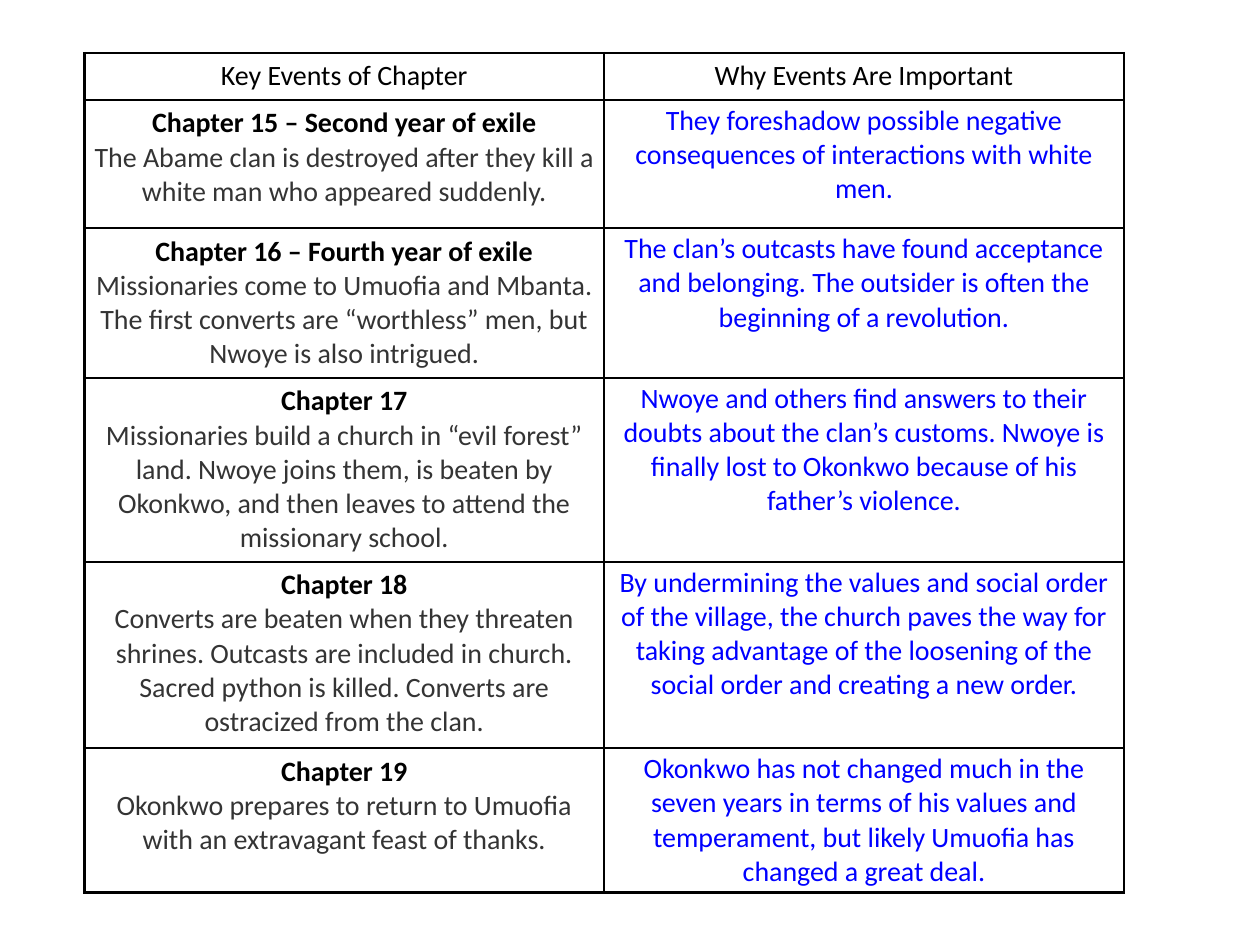
from lxml import etree
from pptx import Presentation
from pptx.dml.color import RGBColor
from pptx.enum import text
from pptx.oxml.ns import qn
from pptx.util import Inches, Pt

BLACK = RGBColor(0x00, 0x00, 0x00)
GRAY = RGBColor(0x34, 0x34, 0x34)
BLUE = RGBColor(0x00, 0x00, 0xFF)

COLUMN_WIDTH = 4.125
ROW_HEIGHTS = [0.25, 1.02, 1.17, 1.17, 1.48, 0.98]
HEADINGS = ["Key Events of Chapter", "Why Events Are Important"]
CHAPTERS = [
    ("Chapter 15 – Second year of exile",
     "The Abame clan is destroyed after they kill a white man who appeared suddenly.",
     "They foreshadow possible negative consequences of interactions with white men."),
    ("Chapter 16 – Fourth year of exile",
     "Missionaries come to Umuofia and Mbanta. The first converts are “worthless” men, "
     "but Nwoye is also intrigued.",
     "The clan’s outcasts have found acceptance and belonging. The outsider is often "
     "the beginning of a revolution."),
    ("Chapter 17",
     "Missionaries build a church in “evil forest” land. Nwoye joins them, is beaten by "
     "Okonkwo, and then leaves to attend the missionary school.",
     "Nwoye and others find answers to their doubts about the clan’s customs. Nwoye is "
     "finally lost to Okonkwo because of his father’s violence."),
    ("Chapter 18",
     "Converts are beaten when they threaten shrines. Outcasts are included in church. "
     "Sacred python is killed. Converts are ostracized from the clan.",
     "By undermining the values and social order of the village, the church paves the "
     "way for taking advantage of the loosening of the social order and creating a new order."),
    ("Chapter 19",
     "Okonkwo prepares to return to Umuofia with an extravagant feast of thanks.",
     "Okonkwo has not changed much in the seven years in terms of his values and "
     "temperament, but likely Umuofia has changed a great deal."),
]


def write(para, words, color=BLACK, bold=False):
    para.alignment = text.PP_ALIGN.CENTER
    span = para.add_run()
    span.text = words
    span.font.name = "Calibri"
    span.font.size = Pt(16)
    span.font.bold = bold
    span.font.color.rgb = color


def style_cell(cell, side=0.05, top=0.05):
    """Set the insets, a black border on every side and no fill."""
    cell.margin_left = cell.margin_right = Inches(side)
    cell.margin_top = cell.margin_bottom = Inches(top)
    cell.vertical_anchor = text.MSO_ANCHOR.TOP
    properties = cell._tc.get_or_add_tcPr()
    for edge in ("a:lnL", "a:lnR", "a:lnT", "a:lnB"):
        line = etree.SubElement(properties, qn(edge), w=str(Pt(1.5)))
        fill = etree.SubElement(line, qn("a:solidFill"))
        etree.SubElement(fill, qn("a:srgbClr"), val=str(BLACK))
    cell.fill.background()


def add_events_table(page):
    frame = page.shapes.add_table(
        len(ROW_HEIGHTS), len(HEADINGS), Inches(0.67), Inches(0.42),
        Inches(COLUMN_WIDTH * len(HEADINGS)), Inches(sum(ROW_HEIGHTS)))
    table = frame.table
    table.first_row = table.horz_banding = False
    for row, height in zip(table.rows, ROW_HEIGHTS):
        row.height = Inches(height)
    return table


def fill_events_table(table):
    for column, heading in enumerate(HEADINGS):
        cell = table.cell(0, column)
        style_cell(cell)
        write(cell.text_frame.paragraphs[0], heading)
    for row, (chapter, events, importance) in enumerate(CHAPTERS, start=1):
        event_cell, reason_cell = table.cell(row, 0), table.cell(row, 1)
        style_cell(event_cell)
        write(event_cell.text_frame.paragraphs[0], chapter, bold=True)
        write(event_cell.text_frame.add_paragraph(), events, color=GRAY)
        style_cell(reason_cell, side=0.06, top=0.03)
        write(reason_cell.text_frame.paragraphs[0], importance, color=BLUE)


def main():
    deck = Presentation()
    deck.slide_width, deck.slide_height = Inches(10), Inches(7.5)
    page = deck.slides.add_slide(deck.slide_layouts[6])
    fill_events_table(add_events_table(page))
    deck.save("out.pptx")


if __name__ == "__main__":
    main()
